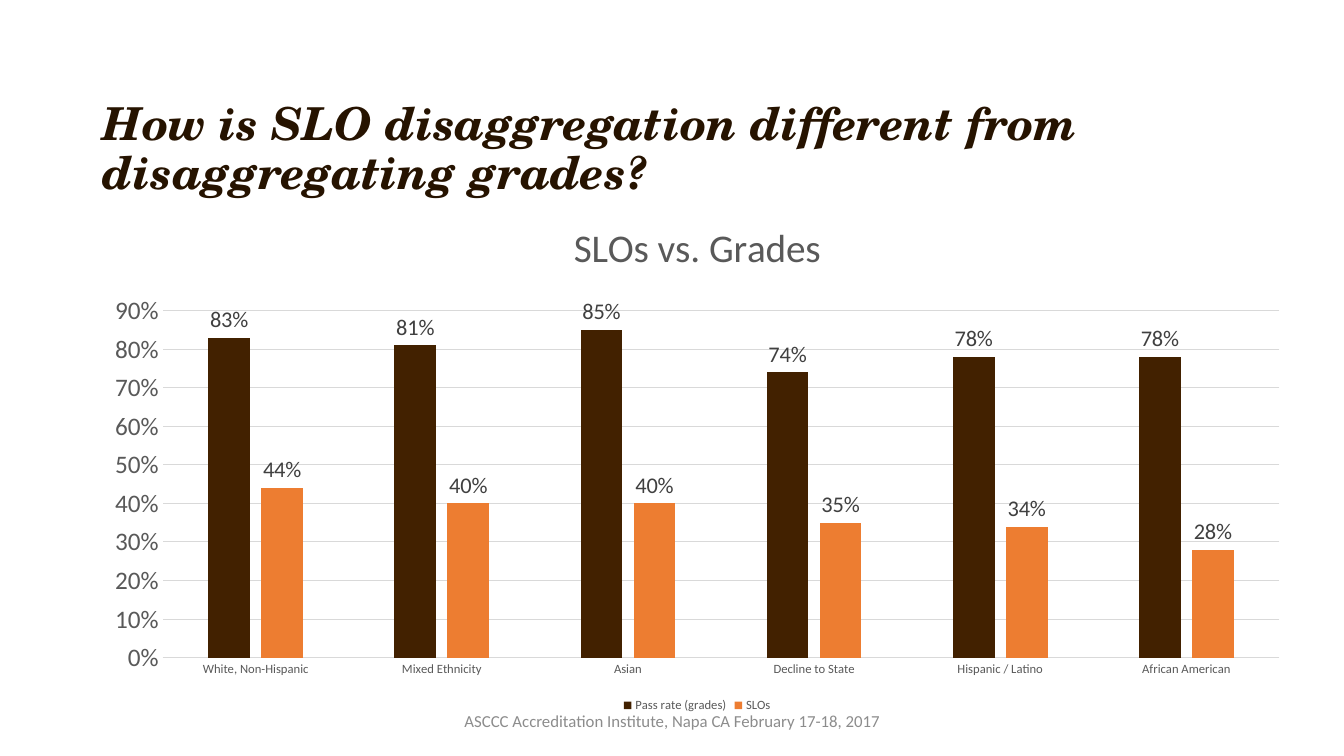
from dataclasses import dataclass

import pptx
import pptx.chart.data
import pptx.dml.color
import pptx.enum.chart
import pptx.enum.text
import pptx.util
from pptx.dml.color import RGBColor
from pptx.util import Inches, Pt

BROWN = RGBColor(0x42, 0x21, 0x00)
ORANGE = RGBColor(0xED, 0x7D, 0x31)
TITLE_BROWN = RGBColor(0x26, 0x13, 0x00)
AXIS_GREY = RGBColor(0x59, 0x59, 0x59)
LABEL_GREY = RGBColor(0x40, 0x40, 0x40)
GRID_GREY = RGBColor(0xD9, 0xD9, 0xD9)
FOOTER_GREY = RGBColor(0x8C, 0x8C, 0x8C)
BODY_FONT = "Calibri"
TITLE_FONT = "TeX Gyre Schola"


@dataclass
class Rate:
    name: str
    values: tuple[float, ...]
    color: RGBColor


@dataclass
class Caption:
    text: str
    box: tuple[float, float, float, float]
    font: str
    size: float
    color: RGBColor
    align: pptx.enum.text.PP_ALIGN
    spacing: float = 1.0
    emphasis: bool = False


GROUPS = ("White, Non-Hispanic", "Mixed Ethnicity", "Asian",
          "Decline to State", "Hispanic / Latino", "African American")
RATES = (
    Rate("Pass rate (grades)", (0.83, 0.81, 0.85, 0.74, 0.78, 0.78), BROWN),
    Rate("SLOs", (0.44, 0.40, 0.40, 0.35, 0.34, 0.28), ORANGE),
)
CAPTIONS = (
    Caption("How is SLO disaggregation different from disaggregating grades?",
            (0.92, 0.99, 11.5, 1), TITLE_FONT, 32.4, TITLE_BROWN,
            pptx.enum.text.PP_ALIGN.LEFT, spacing=0.9, emphasis=True),
    Caption("ASCCC Accreditation Institute, Napa CA February 17-18, 2017",
            (4.42, 6.95, 4.5, 0.4), BODY_FONT, 12, FOOTER_GREY,
            pptx.enum.text.PP_ALIGN.CENTER),
)


def style_font(font: pptx.text.text.Font, size: float, color: RGBColor,
               name: str = BODY_FONT) -> None:
    font.name = name
    font.size = Pt(size)
    font.color.rgb = color


def style_line(line: pptx.dml.line.LineFormat) -> None:
    line.color.rgb = GRID_GREY
    line.width = Pt(0.75)


def add_caption(slide: pptx.slide.Slide, caption: Caption) -> None:
    tf = slide.shapes.add_textbox(*map(Inches, caption.box)).text_frame
    tf.word_wrap = True
    tf.vertical_anchor = pptx.enum.text.MSO_ANCHOR.MIDDLE
    p = tf.paragraphs[0]
    p.text = caption.text
    p.alignment = caption.align
    p.line_spacing = caption.spacing
    style_font(p.font, caption.size, caption.color, caption.font)
    p.font.bold = p.font.italic = caption.emphasis


def add_rate_chart(slide: pptx.slide.Slide) -> None:
    data = pptx.chart.data.CategoryChartData(number_format="0%")
    data.categories = GROUPS
    for rate in RATES:
        data.add_series(rate.name, rate.values)
    chart = slide.shapes.add_chart(
        pptx.enum.chart.XL_CHART_TYPE.COLUMN_CLUSTERED,
        Inches(0.9), Inches(1.97), Inches(12.03), Inches(5.14), data).chart
    style_font(chart.font, 10, AXIS_GREY)

    chart.has_title = True
    p = chart.chart_title.text_frame.paragraphs[0]
    p.text = "SLOs vs. Grades"
    style_font(p.font, 28, AXIS_GREY)
    p.font.bold = False
    chart.chart_title.include_in_layout = False

    chart.has_legend = True
    chart.legend.position = pptx.enum.chart.XL_LEGEND_POSITION.BOTTOM
    chart.legend.include_in_layout = False
    style_font(chart.legend.font, 9, AXIS_GREY)

    for axis, size in ((chart.category_axis, 9), (chart.value_axis, 18)):
        axis.major_tick_mark = pptx.enum.chart.XL_TICK_MARK.NONE
        axis.minor_tick_mark = pptx.enum.chart.XL_TICK_MARK.NONE
        style_font(axis.tick_labels.font, size, AXIS_GREY)
    style_line(chart.category_axis.format.line)
    values = chart.value_axis
    values.minimum_scale, values.maximum_scale = 0, 0.9
    values.major_unit = 0.1
    values.tick_labels.number_format = "0%"
    values.tick_labels.number_format_is_linked = False
    values.format.line.fill.background()
    style_line(values.major_gridlines.format.line)

    plot = chart.plots[0]
    plot.gap_width = 219
    plot.overlap = -27
    plot.vary_by_categories = False
    for series, rate in zip(plot.series, RATES):
        series.format.fill.solid()
        series.format.fill.fore_color.rgb = rate.color
        labels = series.data_labels
        labels.show_value = True
        labels.number_format = "0%"
        labels.number_format_is_linked = False
        labels.position = pptx.enum.chart.XL_LABEL_POSITION.OUTSIDE_END
        style_font(labels.font, 16, LABEL_GREY)


def main() -> None:
    prs = pptx.Presentation()
    prs.slide_width, prs.slide_height = Inches(13.33), Inches(7.5)
    slide = prs.slides.add_slide(prs.slide_layouts[6])
    add_rate_chart(slide)
    for caption in CAPTIONS:
        add_caption(slide, caption)
    prs.save("out.pptx")


if __name__ == "__main__":
    main()
